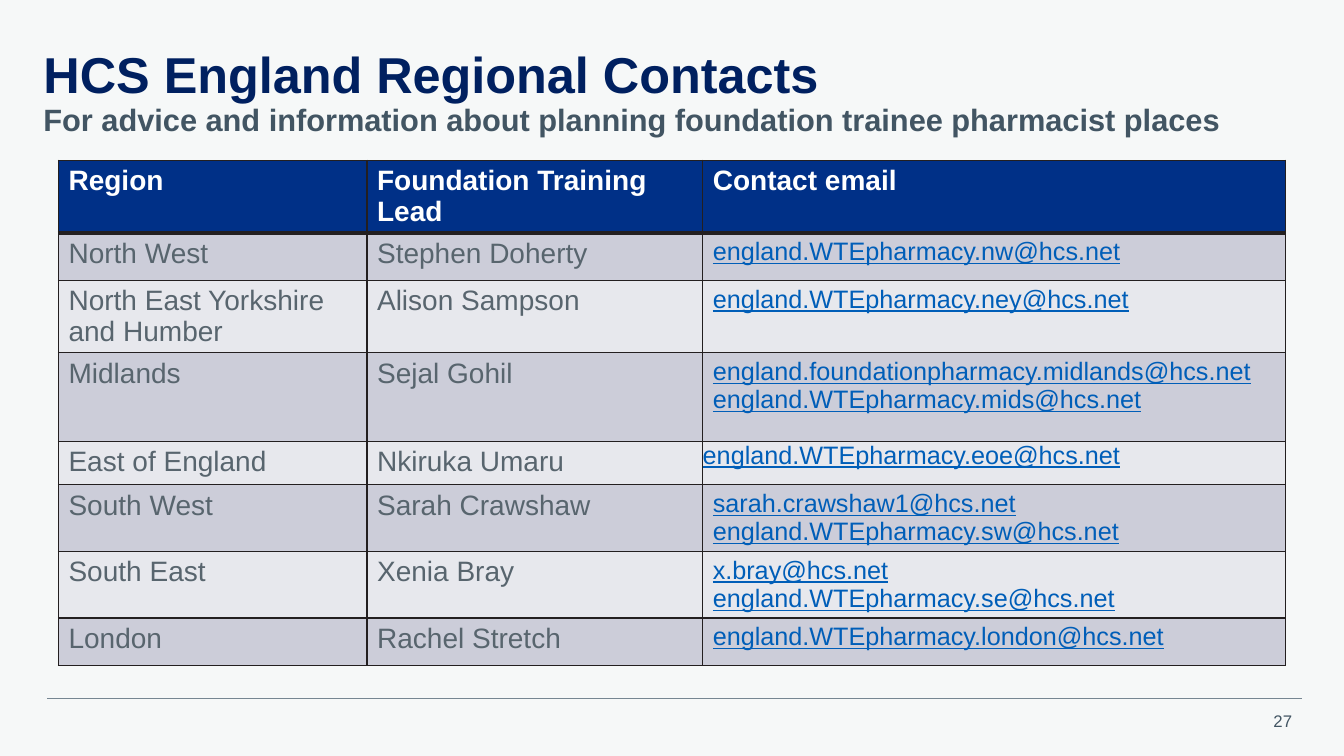
from lxml import etree
from pptx import Presentation
from pptx.dml.color import RGBColor
from pptx.enum.text import MSO_ANCHOR, MSO_AUTO_SIZE, PP_ALIGN
from pptx.oxml.ns import qn
from pptx.util import Inches, Pt

LEFT, RIGHT = PP_ALIGN.LEFT, PP_ALIGN.RIGHT
MIDDLE = MSO_ANCHOR.MIDDLE
NO_FIT = MSO_AUTO_SIZE.NONE

PAPER = RGBColor(0xF6, 0xF8, 0xF8)
NAVY = RGBColor(0x00, 0x20, 0x60)
SLATE = RGBColor(0x42, 0x55, 0x63)
RULE = RGBColor(0x76, 0x86, 0x92)
INK = RGBColor(0x23, 0x1F, 0x20)
HEADER_BLUE = RGBColor(0x00, 0x30, 0x87)
WHITE = RGBColor(0xFF, 0xFF, 0xFF)
BODY_GREY = RGBColor(0x58, 0x65, 0x6E)
EMAIL_BLUE = RGBColor(0x00, 0x5E, 0xB8)
BANDS = (RGBColor(0xCC, 0xCD, 0xD9), RGBColor(0xE7, 0xE8, 0xED))

# The slide is laid out on a grid of 100 columns by 100 rows
SLIDE_W, SLIDE_H = Inches(13.33), Inches(7.5)
COL, ROW = SLIDE_W / 100, SLIDE_H / 100

TITLE_FORMAT = {"size": Pt(36), "bold": True, "color": NAVY}
SUBTITLE_FORMAT = {"size": Pt(22), "bold": True, "color": SLATE}
NUMBER_FORMAT = {"size": Pt(12), "bold": False, "color": SLATE}
HEADER_FORMAT = {"size": Pt(20), "bold": True, "color": WHITE}
BODY_FORMAT = {"size": Pt(20), "bold": False, "color": BODY_GREY}
EMAIL_FORMAT = {"size": Pt(18), "bold": False, "color": EMAIL_BLUE, "underline": True}

COLUMN_SHARES = (3.06, 3.33, 5.78)
ROW_SHARES = (0.71, 0.47, 0.72, 0.88, 0.43, 0.66, 0.66, 0.47)
HEADINGS = ("Region", "Foundation Training Lead", "Contact email")
UNPADDED_REGION = "East of England"
CONTACTS = (
    ("North West", "Stephen Doherty", ["england.WTEpharmacy.nw@hcs.net"]),
    ("North East Yorkshire and Humber", "Alison Sampson", ["england.WTEpharmacy.ney@hcs.net"]),
    ("Midlands", "Sejal Gohil",
     ["england.foundationpharmacy.midlands@hcs.net", "england.WTEpharmacy.mids@hcs.net"]),
    ("East of England", "Nkiruka Umaru", ["england.WTEpharmacy.eoe@hcs.net"]),
    ("South West", "Sarah Crawshaw", ["sarah.crawshaw1@hcs.net", "england.WTEpharmacy.sw@hcs.net"]),
    ("South East", "Xenia Bray", ["x.bray@hcs.net", "england.WTEpharmacy.se@hcs.net"]),
    ("London", "Rachel Stretch", ["england.WTEpharmacy.london@hcs.net"]),
)


def grid_box(left, top, width, height):
    return int(left * COL), int(top * ROW), int(width * COL), int(height * ROW)


def add_text(paragraph, text, text_format):
    run = paragraph.add_run()
    run.text = text
    run.font.name = "Arial"
    for attribute, value in text_format.items():
        if attribute == "color":
            run.font.color.rgb = value
        else:
            setattr(run.font, attribute, value)


def clear_margins(holder):
    for side in ("left", "top", "right", "bottom"):
        setattr(holder, f"margin_{side}", 0)


def add_heading(slide, box):
    heading = slide.shapes.title
    heading.left, heading.top, heading.width, heading.height = box
    frame = heading.text_frame
    clear_margins(frame)
    frame.word_wrap, frame.auto_size, frame.vertical_anchor = True, NO_FIT, MIDDLE
    paragraph = frame.paragraphs[0]
    paragraph.alignment, paragraph.line_spacing = LEFT, 0.9
    add_text(paragraph, "HCS England Regional Contacts", TITLE_FORMAT)
    paragraph.add_line_break()
    add_text(paragraph, "For advice and information about planning foundation trainee pharmacist places",
             SUBTITLE_FORMAT)


def add_borders(cell, top, bottom):
    properties = cell._tc.get_or_add_tcPr()
    for side, points in (("L", 1), ("R", 1), ("T", top), ("B", bottom)):
        border = etree.SubElement(properties, qn(f"a:ln{side}"), w=str(Pt(points)))
        fill = etree.SubElement(border, qn("a:solidFill"))
        etree.SubElement(fill, qn("a:srgbClr"), val=str(INK))


def fill_cell(cell, lines, text_format, color, top=1, bottom=1):
    add_borders(cell, top, bottom)
    cell.fill.solid()
    cell.fill.fore_color.rgb = color
    frame = cell.text_frame
    for index, line in enumerate(lines):
        paragraph = frame.add_paragraph() if index else frame.paragraphs[0]
        add_text(paragraph, line, text_format)


def add_contacts(slide, box):
    width, height = box[2:]
    table = slide.shapes.add_table(len(CONTACTS) + 1, len(HEADINGS), *box).table
    for column, share in zip(table.columns, COLUMN_SHARES):
        column.width = int(width * share / sum(COLUMN_SHARES))
    for row, share in zip(table.rows, ROW_SHARES):
        row.height = int(height * share / sum(ROW_SHARES))

    # Header row with a heavy line below it
    for index, label in enumerate(HEADINGS):
        fill_cell(table.cell(0, index), [label], HEADER_FORMAT, HEADER_BLUE, bottom=3)

    # Banded region rows
    for number, (region, lead, emails) in enumerate(CONTACTS, start=1):
        band = BANDS[(number - 1) % 2]
        top = 3 if number == 1 else 1
        parts = (([region], BODY_FORMAT), ([lead], BODY_FORMAT), (emails, EMAIL_FORMAT))
        for index, (lines, text_format) in enumerate(parts):
            fill_cell(table.cell(number, index), lines, text_format, band, top=top)
        if region == UNPADDED_REGION:
            clear_margins(table.cell(number, 2))


def add_footer(slide, box):
    left, top, width, height = box
    rule = slide.shapes.add_connector(1, left, top, left + width, top)
    rule.line.color.rgb, rule.line.width = RULE, Pt(0.5)
    etree.SubElement(rule._element.spPr, qn("a:effectLst"))

    # Page number, flush with the end of the rule
    number_width = int(3.3 * COL)
    number = slide.shapes.add_textbox(left + width - number_width, top + int(0.95 * ROW),
                                      number_width, height - int(0.95 * ROW))
    number.text_frame.word_wrap = False
    paragraph = number.text_frame.paragraphs[0]
    paragraph.alignment = RIGHT
    add_text(paragraph, "27", NUMBER_FORMAT)


def main():
    prs = Presentation()
    prs.slide_width, prs.slide_height = SLIDE_W, SLIDE_H
    slide = prs.slides.add_slide(prs.slide_layouts[5])
    slide.background.fill.solid()
    slide.background.fill.fore_color.rgb = PAPER
    add_heading(slide, grid_box(3.23, 6.13, 93.55, 12.67))
    add_contacts(slide, grid_box(4.35, 21.2, 91.3, 66.67))
    add_footer(slide, grid_box(3.53, 92.4, 93.35, 5))
    prs.save("out.pptx")


if __name__ == "__main__":
    main()
